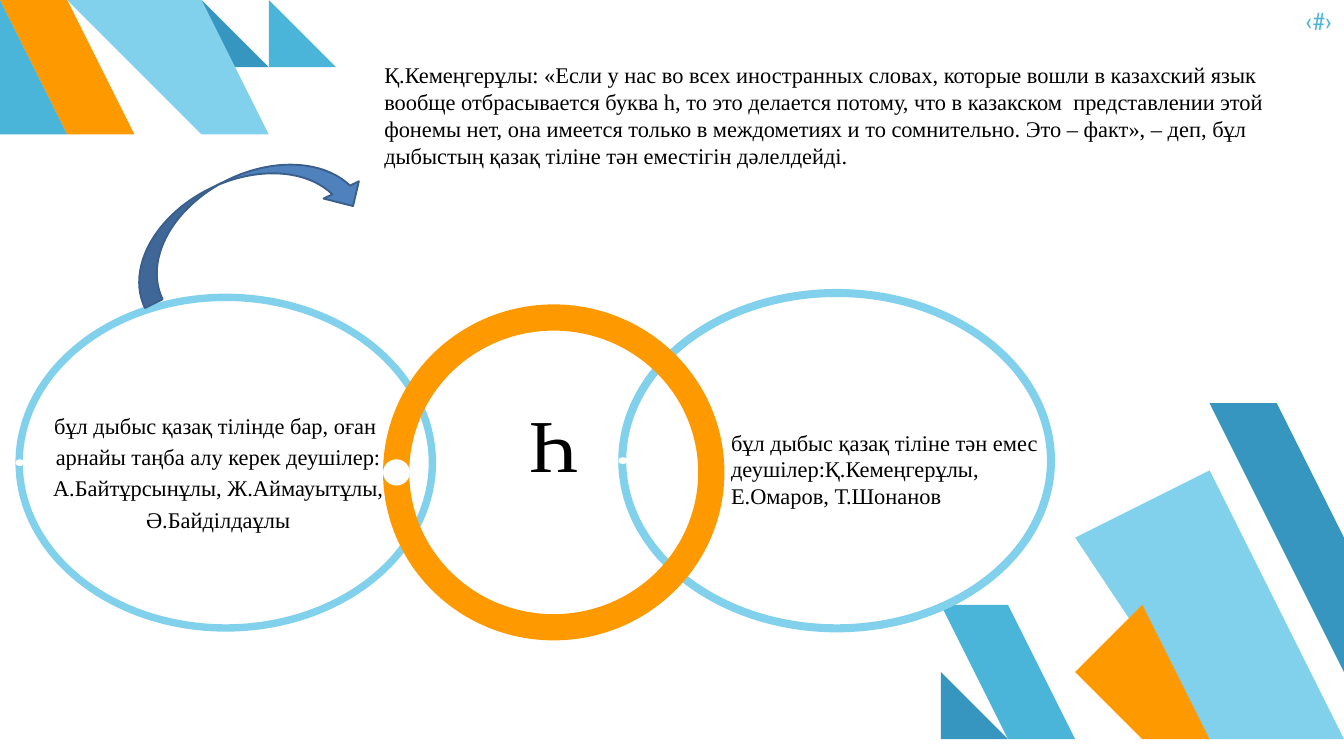
import pptx
import pptx.util
import pptx.dml.color
import pptx.enum.shapes
import pptx.enum.text

Inches, Pt = pptx.util.Inches, pptx.util.Pt
SHAPE = pptx.enum.shapes.MSO_SHAPE
ALIGN, ANCHOR = pptx.enum.text.PP_ALIGN, pptx.enum.text.MSO_ANCHOR

THEME = {
    "sky": "81D1EC", "cyan": "4BB5D9", "blue": "3796BF", "orange": "FF9900",
    "arrow": "4F81BD", "arrow_line": "3A5F8C", "ink": "000000", "paper": "FFFFFF",
    "serif": "Times New Roman", "sans": "Roboto Condensed",
    "body": 24, "letter": 80, "number": 26,
}

# Content: corner stripes (colour, corner points)
STRIPES = [
    ("cyan", [(15.07, 11.25), (16.26, 11.25), (15.08, 8.89), (14.13, 9.37)]),
    ("sky", [(17.81, 11.25), (19.95, 11.25), (17.82, 6.99), (16.11, 7.85)]),
    ("orange", [(16.71, 11.25), (17.71, 11.25), (16.72, 9.27), (15.91, 9.67)]),
    ("blue", [(13.95, 11.25), (14.51, 11.25), (13.95, 10.14), (13.5, 10.37)]),
    ("blue", [(19.08, 5.81), (18.13, 6.26), (20, 10.03), (20, 7.67)]),
    ("blue", [(3.25, 0), (2.75, 0), (3.25, 0.99), (3.65, 0.79)]),
    ("orange", [(1.11, 0), (0.05, 0), (1.1, 2.09), (1.95, 1.67)]),
    ("sky", [(2.63, 0), (1.4, 0), (2.62, 2.45), (3.61, 1.96)]),
    ("cyan", [(4.29, 0), (3.72, 0), (4.28, 1.1), (4.73, 0.88)]),
    ("cyan", [(0.41, 2.01), (0.83, 1.8), (0, 0.13), (0, 1.18)]),
]

# Rings: colour, box, band width, size of the dot in the band
RINGS = [
    ("sky", (0.23, 4.37, 6.26, 5.03), 0.11, (0.13, 0.1)),
    ("sky", (9.2, 4.3, 6.5, 5.11), 0.12, (0.14, 0.1)),
    ("orange", (5.7, 4.53, 5.08, 5), 0.39, (0.4, 0.39)),
]

SUPPORTERS = [
    "бұл дыбыс қазақ тілінде бар, оған ",
    "арнайы таңба алу керек деушілер: А.Байтұрсынұлы, Ж.Аймауытұлы, Ə.Байділдаұлы",
]
OPPONENTS = [
    "бұл дыбыс қазақ тіліне тəн емес",
    "деушілер:Қ.Кемеңгерұлы,",
    "Е.Омаров, Т.Шонанов",
]
QUOTE = [
    "Қ.Кемеңгерұлы: «Если у нас во всех иностранных словах, которые вошли в "
    "казахский язык вообще отбрасывается буква һ, то это делается потому, что "
    "в казакском  представлении этой фонемы нет, она имеется только в "
    "междометиях и то сомнительно. Это – факт», – деп, бұл дыбыстың қазақ "
    "тіліне тəн еместігін дəлелдейді."
]


def color(name):
    return pptx.dml.color.RGBColor.from_string(THEME[name])


def paint(sp, fill):
    sp.shadow.inherit = False
    sp.fill.solid()
    sp.fill.fore_color.rgb = color(fill)
    sp.line.fill.background()


def add_preset(s, kind, box, fill):
    sp = s.shapes.add_shape(kind, *map(Inches, box))
    paint(sp, fill)
    return sp


def add_stripe(s, fill, points):
    fb = s.shapes.build_freeform(*points[0], scale=Inches(1))
    fb.add_line_segments(points[1:], close=True)
    paint(fb.convert_to_shape(), fill)


def add_ring(s, fill, box, band, dot):
    x, y, w, h = box
    ring = add_preset(s, SHAPE.DONUT, box, fill)
    ring.adjustments[0] = band / min(w, h)
    add_preset(s, SHAPE.OVAL, (x, y + (h - dot[1]) / 2, *dot), "paper")


def add_text(s, box, lines, size="body", font="serif", ink="ink", align=ALIGN.LEFT,
             anchor=ANCHOR.TOP, spacing=None, insets=(0.1, 0.05), wrap=True):
    tf = s.shapes.add_textbox(*map(Inches, box)).text_frame
    tf.word_wrap = wrap
    tf.vertical_anchor = anchor
    tf.margin_left = tf.margin_right = Inches(insets[0])
    tf.margin_top = tf.margin_bottom = Inches(insets[1])
    tf.text = "\n".join(lines)
    for p in tf.paragraphs:
        p.alignment = align
        p.font.name = THEME[font]
        p.font.size = Pt(THEME[size])
        p.font.color.rgb = color(ink)
        if spacing:
            p.line_spacing = Pt(spacing)


def main():
    prs = pptx.Presentation()
    prs.slide_width, prs.slide_height = Inches(20), Inches(11.25)
    s = prs.slides.add_slide(prs.slide_layouts[6])

    # Corner stripes
    for stripe in STRIPES:
        add_stripe(s, *stripe)

    # Overlapping rings
    for ring in RINGS:
        add_ring(s, *ring)

    # Ring texts
    centered = {"align": ALIGN.CENTER, "anchor": ANCHOR.MIDDLE, "spacing": 33.6}
    add_text(s, (0, 6.06, 6.49, 1.87), SUPPORTERS, insets=(0.06, 0), **centered)
    add_text(s, (5.7, 4.51, 5.08, 5.02), ["Һ"], size="letter",
             insets=(0.06, 0.06), **centered)
    add_text(s, (10.78, 6.33, 4.89, 1.31), OPPONENTS, wrap=False)

    # Slide number and quotation
    add_text(s, (18.82, 0.09, 1, 0.67), ["‹#›"], size="number", font="sans",
             ink="cyan", align=ALIGN.RIGHT, spacing=31.2, insets=(0, 0))
    add_text(s, (5.62, 0.86, 13.59, 1.72), QUOTE)

    # Arrow from the left ring to the quotation
    sp = add_preset(s, SHAPE.CURVED_DOWN_ARROW, (1.71, 2.65, 3.74, 1.17), "arrow")
    sp.rotation = 333.9
    sp.line.color.rgb = color("arrow_line")
    sp.line.width = Pt(2)

    prs.save("out.pptx")


if __name__ == "__main__":
    main()
